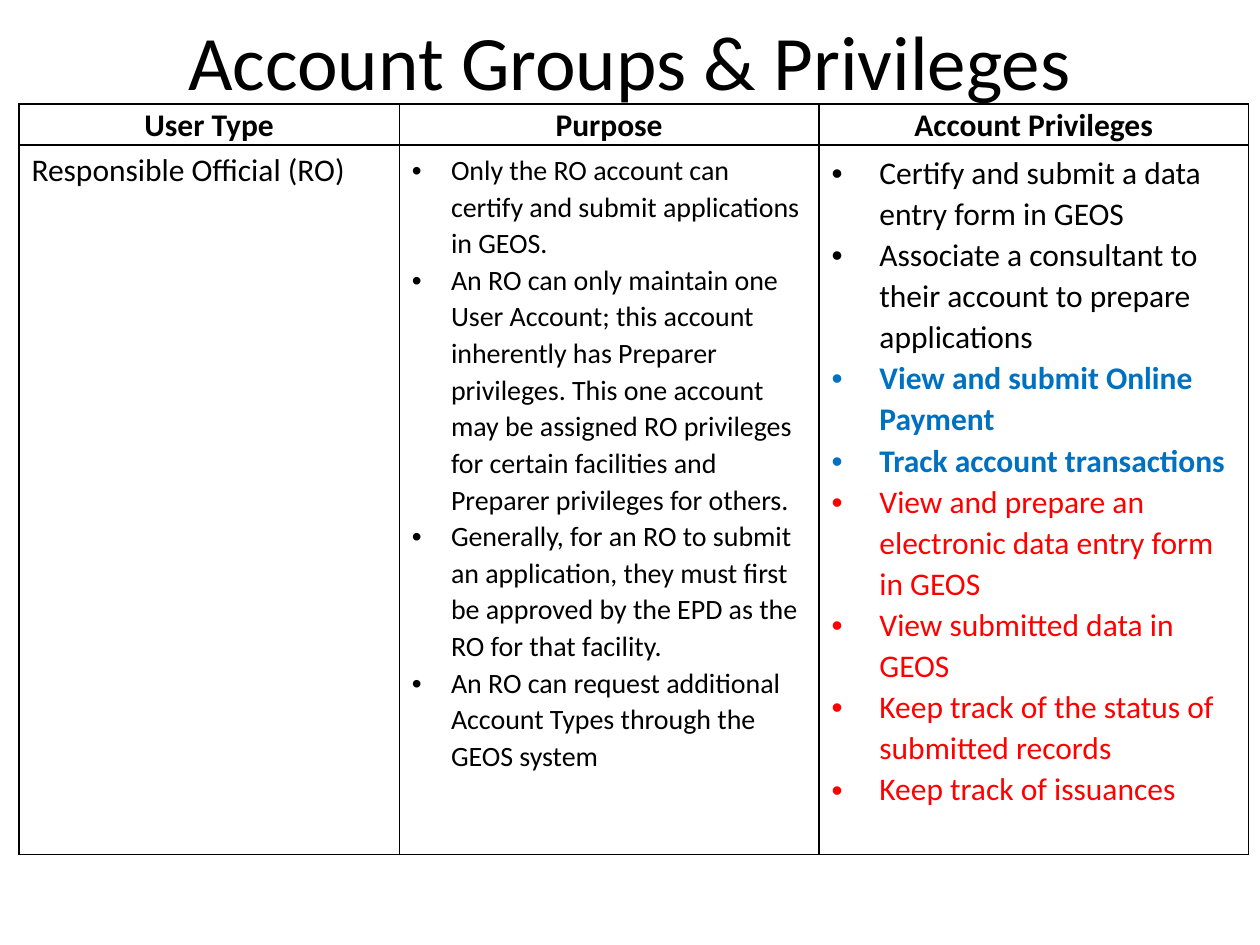
from lxml import etree
from pptx import Presentation
from pptx import util as u
from pptx.dml.color import RGBColor
from pptx.enum import text
from pptx.oxml.ns import qn

COLORS = {"ink": "000000", "payment": "0070C0", "shared": "FF0000"}

deck = Presentation()
deck.slide_width, deck.slide_height = u.Inches(10), u.Inches(7.5)
W, H = deck.slide_width, deck.slide_height
slide = deck.slides.add_slide(deck.slide_layouts[5])


def write(paragraph, words, size=18, color="ink", bold=False, align=None, spacing=None, indent=0):
    if indent:
        props = paragraph._p.get_or_add_pPr()
        props.set("marL", str(u.Inches(indent)))
        props.set("indent", str(-u.Inches(indent)))
        etree.SubElement(props, qn("a:buFont")).set("typeface", "Arial")
        etree.SubElement(props, qn("a:buChar")).set("char", "•")
    paragraph.alignment = align
    paragraph.line_spacing = spacing
    run = paragraph.add_run()
    run.text = words
    run.font.name = "Calibri"
    run.font.size = u.Pt(size)
    run.font.bold = bold
    run.font.color.rgb = RGBColor.from_string(COLORS[color])


def outline(cell):
    props = cell._tc.get_or_add_tcPr()
    for side in ("lnL", "lnR", "lnT", "lnB"):
        line = etree.SubElement(props, qn(f"a:{side}"), w=str(u.Pt(1)))
        fill = etree.SubElement(line, qn("a:solidFill"))
        etree.SubElement(fill, qn("a:srgbClr"), val=COLORS["ink"])
    cell.fill.background()


heading = slide.shapes.title
heading.left, heading.top = int(W * 0.05), int(H * -0.02)
heading.width, heading.height = int(W * 0.9), int(H / 6)
heading.text_frame.vertical_anchor = text.MSO_ANCHOR.MIDDLE
write(heading.text_frame.paragraphs[0], "Account Groups & Privileges", size=44,
      align=text.PP_ALIGN.CENTER)

columns = [
    ("User Type", 3.02, 18, 0, [("Responsible Official (RO)", "ink")]),
    ("Purpose", 3.33, 16, 0.31, [
        ("Only the RO account can certify and submit applications in GEOS.", "ink"),
        ("An RO can only maintain one User Account; this account inherently has Preparer "
         "privileges. This one account may be assigned RO privileges for certain facilities "
         "and Preparer privileges for others.", "ink"),
        ("Generally, for an RO to submit an application, they must first be approved by the "
         "EPD as the RO for that facility.", "ink"),
        ("An RO can request additional Account Types through the GEOS system", "ink"),
    ]),
    ("Account Privileges", 3.41, 18, 0.38, [
        ("Certify and submit a data entry form in GEOS", "ink"),
        ("Associate a consultant to their account to prepare applications", "ink"),
        ("View and submit Online Payment", "payment"),
        ("Track account transactions", "payment"),
        ("View and prepare an electronic data entry form in GEOS", "shared"),
        ("View submitted data in GEOS", "shared"),
        ("Keep track of the status of submitted records", "shared"),
        ("Keep track of issuances", "shared"),
    ]),
]
row_heights = [0.32, 5.63]

privileges = slide.shapes.add_table(
    len(row_heights), len(columns), int(W * 0.015), int(H * 0.11),
    u.Inches(sum(column[1] for column in columns)), u.Inches(sum(row_heights))).table
privileges.first_row = privileges.horz_banding = False
for row, height in zip(privileges.rows, row_heights):
    row.height = u.Inches(height)

for index, (label, width, size, indent, entries) in enumerate(columns):
    privileges.columns[index].width = u.Inches(width)
    header, details = privileges.cell(0, index), privileges.cell(1, index)
    header.margin_left = header.margin_right = u.Inches(0.05)
    header.margin_top = header.margin_bottom = 0
    write(header.text_frame.paragraphs[0], label, bold=True,
          align=text.PP_ALIGN.CENTER, spacing=1.07)
    for number, (entry, color) in enumerate(entries):
        frame = details.text_frame
        paragraph = frame.add_paragraph() if number else frame.paragraphs[0]
        write(paragraph, entry, size=size, color=color, bold=color == "payment",
              spacing=1.07 if indent else None, indent=indent)
    outline(header)
    outline(details)

deck.save("out.pptx")
